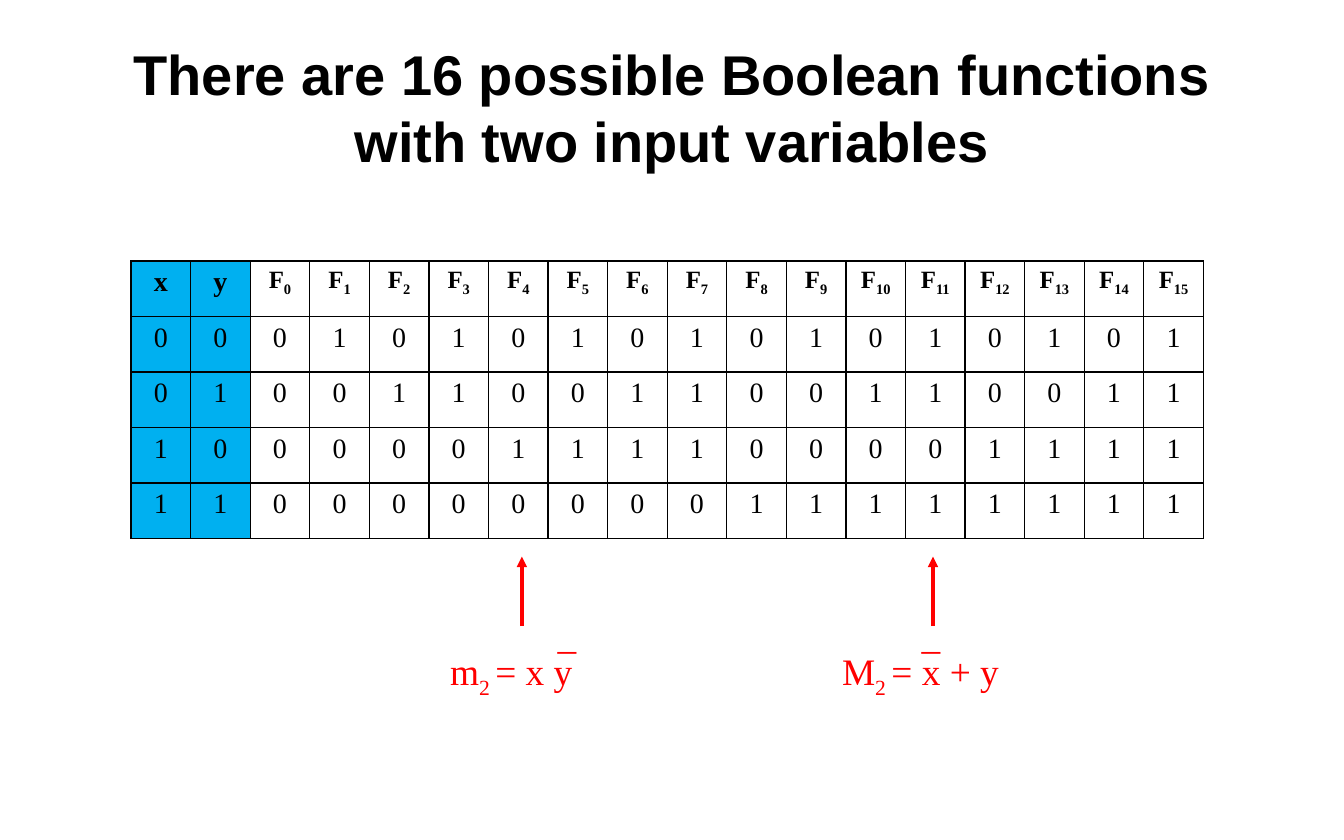
from dataclasses import dataclass

from lxml.etree import SubElement as Sub
from pptx import Presentation
from pptx.dml.color import RGBColor as Rgb
from pptx.enum.shapes import MSO_CONNECTOR as Link
from pptx.enum.text import MSO_ANCHOR as Anchor, MSO_AUTO_SIZE as Fit, PP_ALIGN as Align
from pptx.oxml.ns import qn
from pptx.util import Inches, Pt


@dataclass(frozen=True)
class Theme:
    ink: str = "000000"
    key: str = "00B0F0"
    note: str = "FF0000"
    head: str = "Arial"
    body: str = "Times New Roman"
    title: int = 36
    term: int = 24
    bit: int = 18
    func: int = 16
    rule: float = 1
    arrow: float = 2.25


@dataclass(frozen=True)
class Box:
    """A place on a grid of 12 columns and 7.5 rows."""
    x: float
    y: float
    w: float
    h: float

    def inner(self, dx, dy, w, h):
        return Box(self.x + dx, self.y + dy, w, h)

    @property
    def rect(self):
        return [Inches(v) for v in (self.x, self.y, self.w, self.h)]


THEME = Theme()
COLS, ROWS = 12, 7.5
VARS, FUNCS, CASES = "xy", 16, 4


def write(frame, text, size, font=THEME.body, color=THEME.ink, bold=False, align=None):
    """Fill a frame; pieces between | marks alternate normal and subscript."""
    par = frame.paragraphs[0]
    par.alignment = align
    for i, piece in enumerate(text.split("|")):
        for j, line in enumerate(piece.split("\n")):
            if j:
                par.add_line_break()
            run = par.add_run()
            run.text = line
            run.font.name, run.font.size, run.font.bold = font, Pt(size), bold
            run.font.color.rgb = Rgb.from_string(color)
            if i % 2:
                run._r.get_or_add_rPr().set("baseline", "-25000")


def title(slide, box):
    shape = slide.shapes.title
    shape.left, shape.top, shape.width, shape.height = box.rect
    frame = shape.text_frame
    frame.word_wrap, frame.auto_size = True, Fit.NONE
    frame.vertical_anchor = Anchor.MIDDLE
    write(frame, "There are 16 possible Boolean functions\nwith two input variables",
          THEME.title, font=THEME.head, bold=True, align=Align.CENTER)


def border(cell):
    props = cell._tc.get_or_add_tcPr()
    for side in ("a:lnL", "a:lnR", "a:lnT", "a:lnB"):
        line = Sub(props, qn(side), w=str(Pt(THEME.rule)))
        Sub(Sub(line, qn("a:solidFill")), qn("a:srgbClr"), val=THEME.ink)


def truth(slide, box):
    """Truth table: bit r of n is the value of function n in case r."""
    heads = list(VARS) + [f"F|{n}" for n in range(FUNCS)]
    cases = [[r >> 1, r & 1] + [n >> r & 1 for n in range(FUNCS)] for r in range(CASES)]
    grid = [heads] + cases
    table = slide.shapes.add_table(len(grid), len(heads), *box.rect).table
    table.first_row = table.horz_banding = False
    for col in table.columns:
        col.width = Inches(box.w / len(heads))
    for r, row in enumerate(grid):
        table.rows[r].height = Inches(box.h / len(grid))
        for c, value in enumerate(row):
            cell, given = table.cell(r, c), c < len(VARS)
            border(cell)
            if given:
                cell.fill.solid()
                cell.fill.fore_color.rgb = Rgb.from_string(THEME.key)
            else:
                cell.fill.background()
            size = THEME.bit if r or given else THEME.func
            write(cell.text_frame, str(value), size, bold=r == 0, align=Align.CENTER)


def arrow(slide, x, top, tall):
    """Arrow that points up to a column."""
    ends = [Inches(v) for v in (x, top + tall, x, top)]
    link = slide.shapes.add_connector(Link.STRAIGHT, *ends)
    link.line.color.rgb = Rgb.from_string(THEME.note)
    link.line.width = Pt(THEME.arrow)
    props = link._element.spPr
    Sub(props.find(qn("a:ln")), qn("a:tailEnd"), type="triangle")
    Sub(props, qn("a:effectLst"))


def label(group, text, box):
    frame = group.shapes.add_textbox(*box.rect).text_frame
    frame.word_wrap, frame.auto_size = False, Fit.SHAPE_TO_FIT_TEXT
    write(frame, text, THEME.term, color=THEME.note)


def term(slide, box, text, tip, bar):
    """Arrow at offset tip, over a formula with a negation bar at offset bar."""
    arrow(slide, box.x + tip, box.y, 0.62)
    group = slide.shapes.add_group_shape()
    label(group, text, box.inner(0, box.h - 0.5, box.w, 0.5))
    label(group, "_", box.inner(bar, box.h - 0.82, 0.37, 0.5))


def main():
    deck = Presentation()
    deck.slide_width, deck.slide_height = Inches(COLS), Inches(ROWS)
    slide = deck.slides.add_slide(deck.slide_layouts[5])
    title(slide, Box(1, 0.33, COLS - 2, 1.25))
    truth(slide, Box(1.17, 2.33, 9.58, 2.48))
    term(slide, Box(3.92, 4.97, 1.33, 1.27), "m|2 |= x y", tip=0.74, bar=0.96)
    term(slide, Box(7.42, 4.97, 1.64, 1.27), "M|2 |= x + y", tip=0.91, bar=0.71)
    deck.save("out.pptx")


if __name__ == "__main__":
    main()
